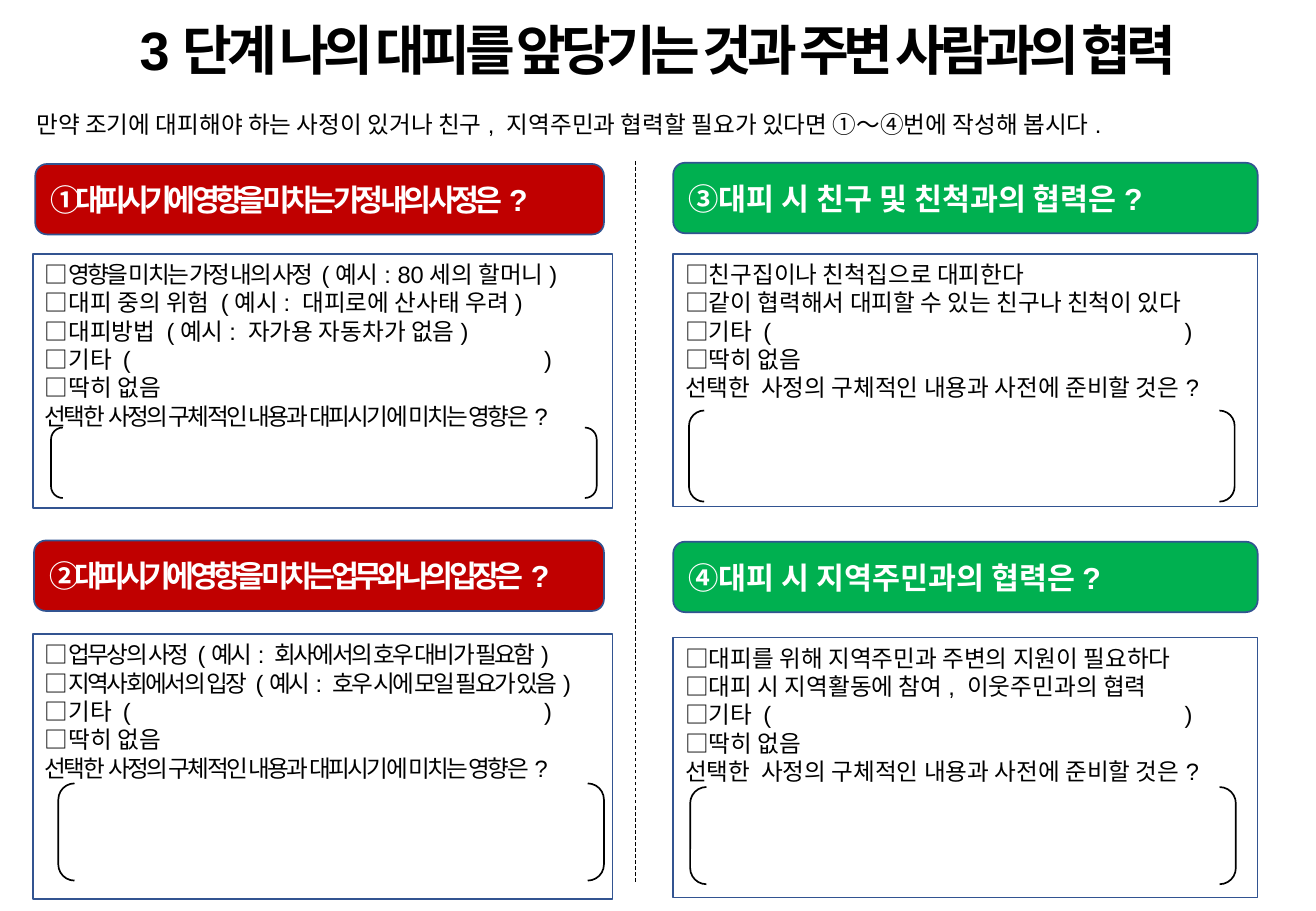
from lxml import etree
from pptx import Presentation
from pptx.dml.color import RGBColor
from pptx.enum.dml import MSO_LINE
from pptx.enum.shapes import MSO_CONNECTOR, MSO_SHAPE
from pptx.enum.text import MSO_ANCHOR, PP_ALIGN
from pptx.oxml.ns import qn
from pptx.util import Inches, Pt

RECT, ROUNDED = MSO_SHAPE.RECTANGLE, MSO_SHAPE.ROUNDED_RECTANGLE
BRACKETS = MSO_SHAPE.DOUBLE_BRACKET
STRAIGHT, DASH = MSO_CONNECTOR.STRAIGHT, MSO_LINE.DASH
TOP, MIDDLE = MSO_ANCHOR.TOP, MSO_ANCHOR.MIDDLE
LEFT, CENTER = PP_ALIGN.LEFT, PP_ALIGN.CENTER

COLORS = {"ink": "000000", "paper": "FFFFFF", "border": "325491",
          "red": "C00000", "green": "00B050"}
COLUMNS, ROWS = 108.3, 75
CELL = Inches(0.1)
TIGHT, TIGHTEST = -150, -300  # letter spacing, hundredths of a point


def color(name):
    return RGBColor.from_string(COLORS[name])


class Worksheet:
    """Style and current slide; places are (column, row, columns, rows)."""

    font = "Arial"
    title_size, heading_size, body_size = 32, 18, 14
    closing_tab = 41.1

    def __init__(self, deck):
        self.slide = deck.slides.add_slide(deck.slide_layouts[6])

    def box(self, kind, place, fill=None, line=None):
        shape = self.slide.shapes.add_shape(kind, *(int(n * CELL) for n in place))
        shape.shadow.inherit = False
        if fill:
            shape.fill.solid()
            shape.fill.fore_color.rgb = color(fill)
        else:
            shape.fill.background()
        if line:
            shape.line.color.rgb = color(line)
            shape.line.width = Pt(1)
        else:
            shape.line.fill.background()
        return shape

    def add_lines(self, shape, lines, size, ink="ink", bold=False,
                  anchor=MIDDLE, align=LEFT):
        """Each line is a list of (text, letter spacing) runs."""
        frame = shape.text_frame
        frame.word_wrap = True
        frame.vertical_anchor = anchor
        for index, line in enumerate(lines):
            paragraph = frame.paragraphs[0] if index == 0 else frame.add_paragraph()
            paragraph.alignment = align
            if any("\t" in text for text, _ in line):
                self.tab_stop(paragraph)
            for text, spacing in line:
                run = paragraph.add_run()
                run.text = text
                run.font.name = self.font
                run.font.size = Pt(size)
                run.font.bold = bold
                run.font.color.rgb = color(ink)
                if spacing:
                    run._r.get_or_add_rPr().set("spc", str(spacing))

    def tab_stop(self, paragraph):
        tabs = etree.SubElement(paragraph._p.get_or_add_pPr(), qn("a:tabLst"))
        etree.SubElement(tabs, qn("a:tab"), pos=str(int(self.closing_tab * CELL)), algn="l")

    def title(self, place, text):
        area = self.slide.shapes.add_textbox(*(int(n * CELL) for n in place))
        self.add_lines(area, [[(text, TIGHTEST)]], self.title_size, bold=True, align=CENTER)

    def intro(self, place, text):
        self.add_lines(self.box(RECT, place, "paper"), [[(text, 0)]], self.body_size)

    def heading(self, place, text, fill, spacing):
        banner = self.box(ROUNDED, place, fill, "border")
        self.add_lines(banner, [[(text, spacing)]], self.heading_size, "paper", True)

    def checklist(self, place, lines):
        panel = self.box(RECT, place, line="border")
        self.add_lines(panel, lines, self.body_size, anchor=TOP)

    def answer_space(self, place):
        self.box(BRACKETS, place, line="ink")

    def divider(self, column, top, bottom):
        ends = (int(n * CELL) for n in (column, bottom, column, top))
        rule = self.slide.shapes.add_connector(STRAIGHT, *ends)
        rule.line.color.rgb = color("ink")
        rule.line.width = Pt(0.5)
        rule.line.dash_style = DASH
        etree.SubElement(rule._element.spPr, qn("a:effectLst"))


OTHER = [("□기타 (\t)", 0)]
NONE = [("□딱히 없음", 0)]
IMPACT = [("선택한  사정의 구체적인 내용과 대피시기에 미치는 영향은?", TIGHT)]
PREPARE = [("선택한  사정의 구체적인 내용과 사전에 준비할 것은?", 0)]

# Heading text, colour, spacing and place; checklist place and lines; answer place
SECTIONS = [
    ("①대피시기에 영향을 미치는 가정 내의 사정은?", "red", TIGHTEST,
     (2.9, 13.5, 46.8, 5.8), (2.7, 20.9, 47.7, 20.9),
     [[("□", 0), ("영향을 미치는 가정 내의 사정 ", TIGHT), ("(예시: 80세의 할머니)", 0)],
      [("□대피 중의 위험 (예시: 대피로에 산사태 우려)", 0)],
      [("□대피방법 (예시: 자가용 자동차가 없음)", 0)],
      OTHER, NONE, IMPACT],
     (4.2, 35.2, 44.9, 5.8)),
    ("②대피시기에 영향을 미치는 업무와 나의 입장은?", "red", TIGHTEST,
     (2.8, 44.5, 46.9, 5.8), (2.7, 52.2, 47.7, 21.8),
     [[("□", 0), ("업무상의 사정 (예시: 회사에서의 호우 대비가 필요함)", TIGHT)],
      [("□", 0), ("지역사회에서의 입장 (예시: 호우 시에 모일 필요가 있음)", TIGHT)],
      OTHER, NONE, IMPACT],
     (4.8, 64.5, 44.9, 8)),
    ("③대피 시 친구 및 친척과의 협력은?", "green", 0,
     (55.4, 13.4, 48.1, 5.8), (55.4, 20.9, 48.1, 20.8),
     [[("□친구집이나 친척집으로 대피한다", 0)],
      [("□같이 협력해서 대피할 수 있는 친구나 친척이 있다", 0)],
      OTHER, NONE, PREPARE],
     (56.7, 33.8, 44.9, 7.5)),
    ("④대피 시 지역주민과의 협력은?", "green", 0,
     (55.4, 44.6, 48.1, 5.8), (55.4, 52.5, 48.1, 21.4),
     [[("□대피를 위해 지역주민과 주변의 지원이 필요하다", 0)],
      [("□대피 시 지역활동에 참여, 이웃주민과의 협력", 0)],
      OTHER, NONE, PREPARE],
     (56.8, 64.8, 44.9, 8)),
]


def main():
    deck = Presentation()
    deck.slide_width, deck.slide_height = int(COLUMNS * CELL), ROWS * CELL
    sheet = Worksheet(deck)

    # Title and introduction
    sheet.title((0, 0.5, COLUMNS, 7.1),
                "3단계 나의 대피를 앞당기는 것과 주변 사람과의 협력")
    sheet.intro((2, 8, 98.1, 4.5),
                "만약 조기에 대피해야 하는 사정이 있거나 친구, 지역주민과 협력할 "
                "필요가 있다면 ①～④번에 작성해 봅시다.")

    # Rule between family circumstances and cooperation
    sheet.divider(52.3, 13.1, 72.6)

    # Four question sections
    for question, fill, spacing, banner, panel, choices, answer in SECTIONS:
        sheet.heading(banner, question, fill, spacing)
        sheet.checklist(panel, choices)
        sheet.answer_space(answer)

    deck.save("out.pptx")


if __name__ == "__main__":
    main()
